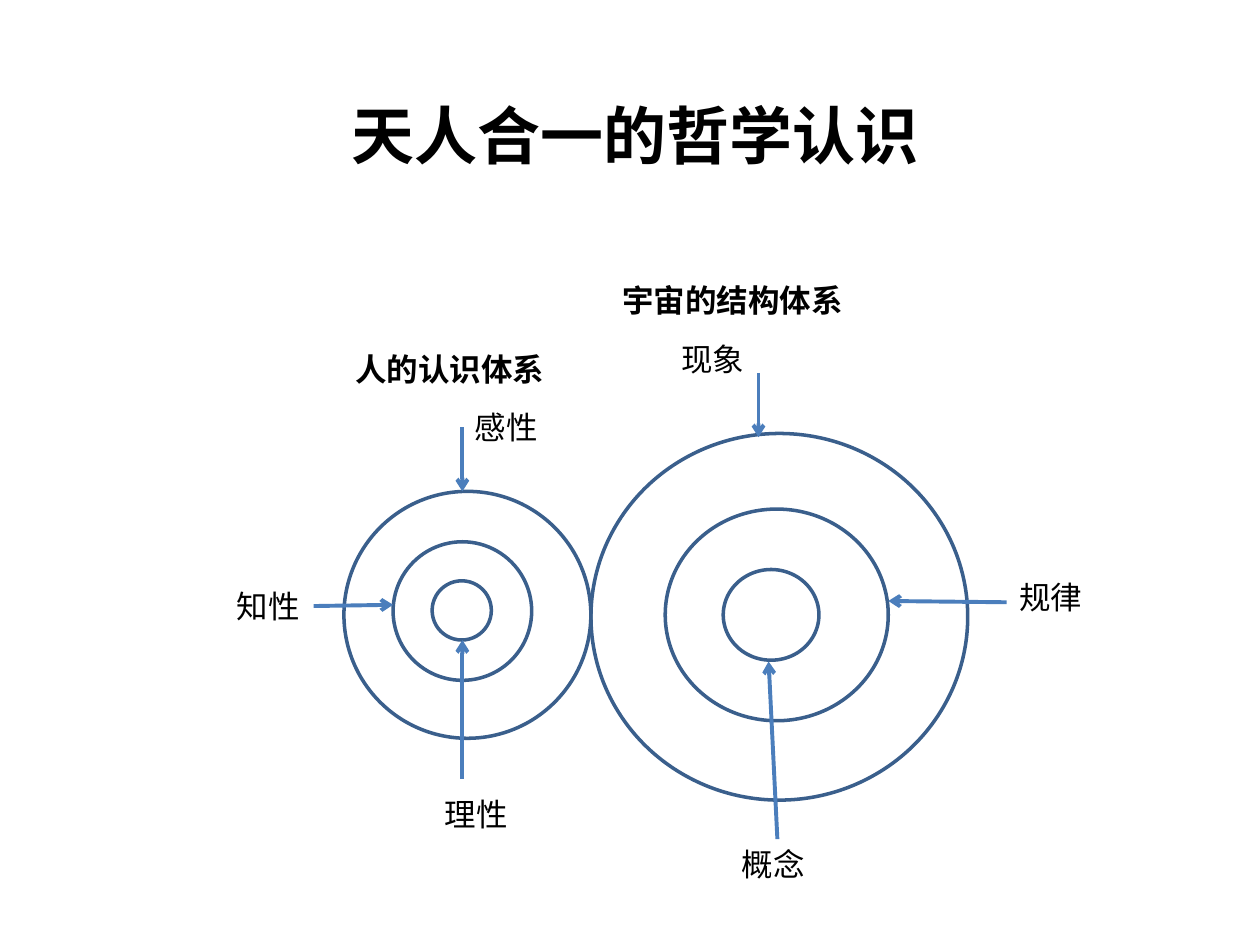
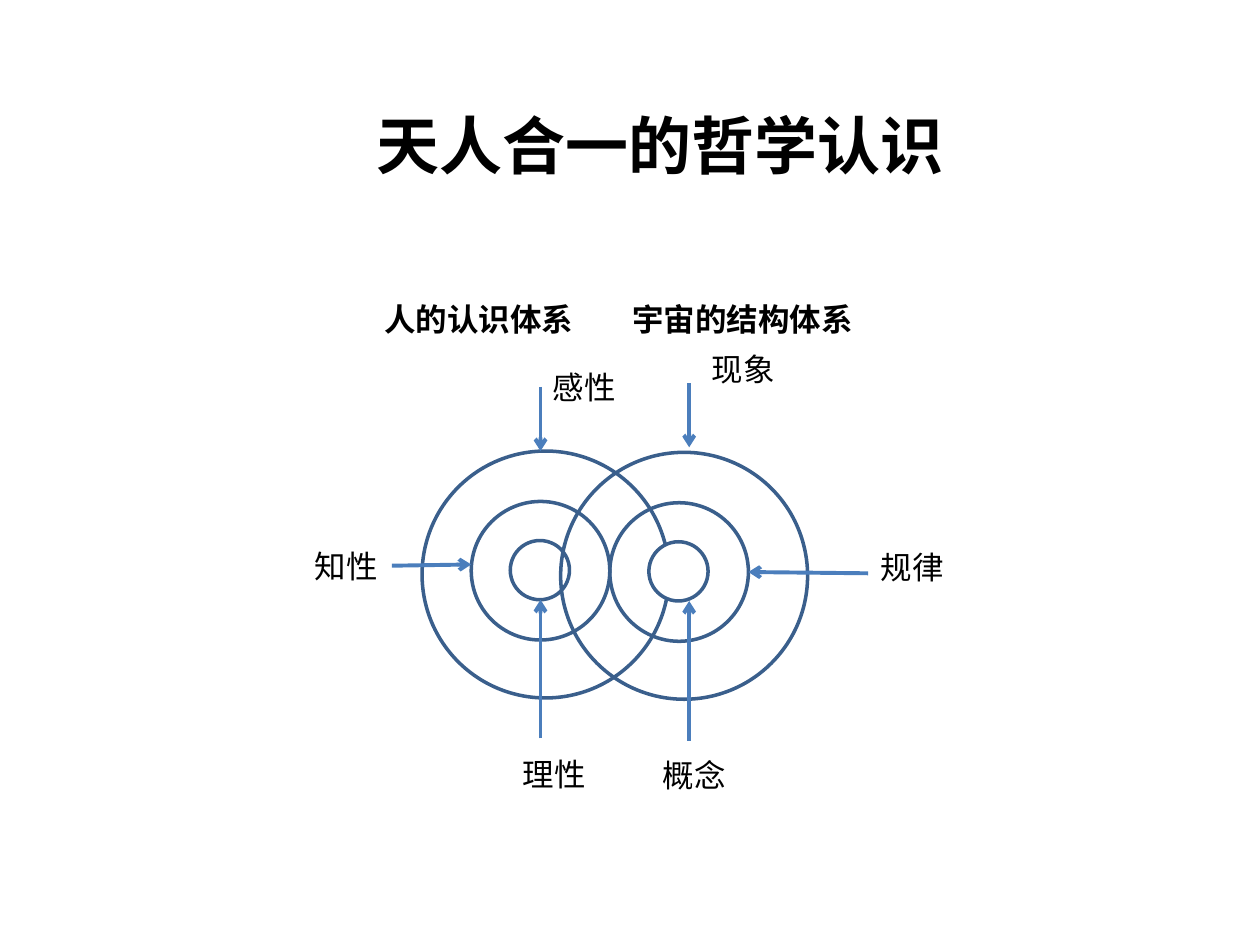
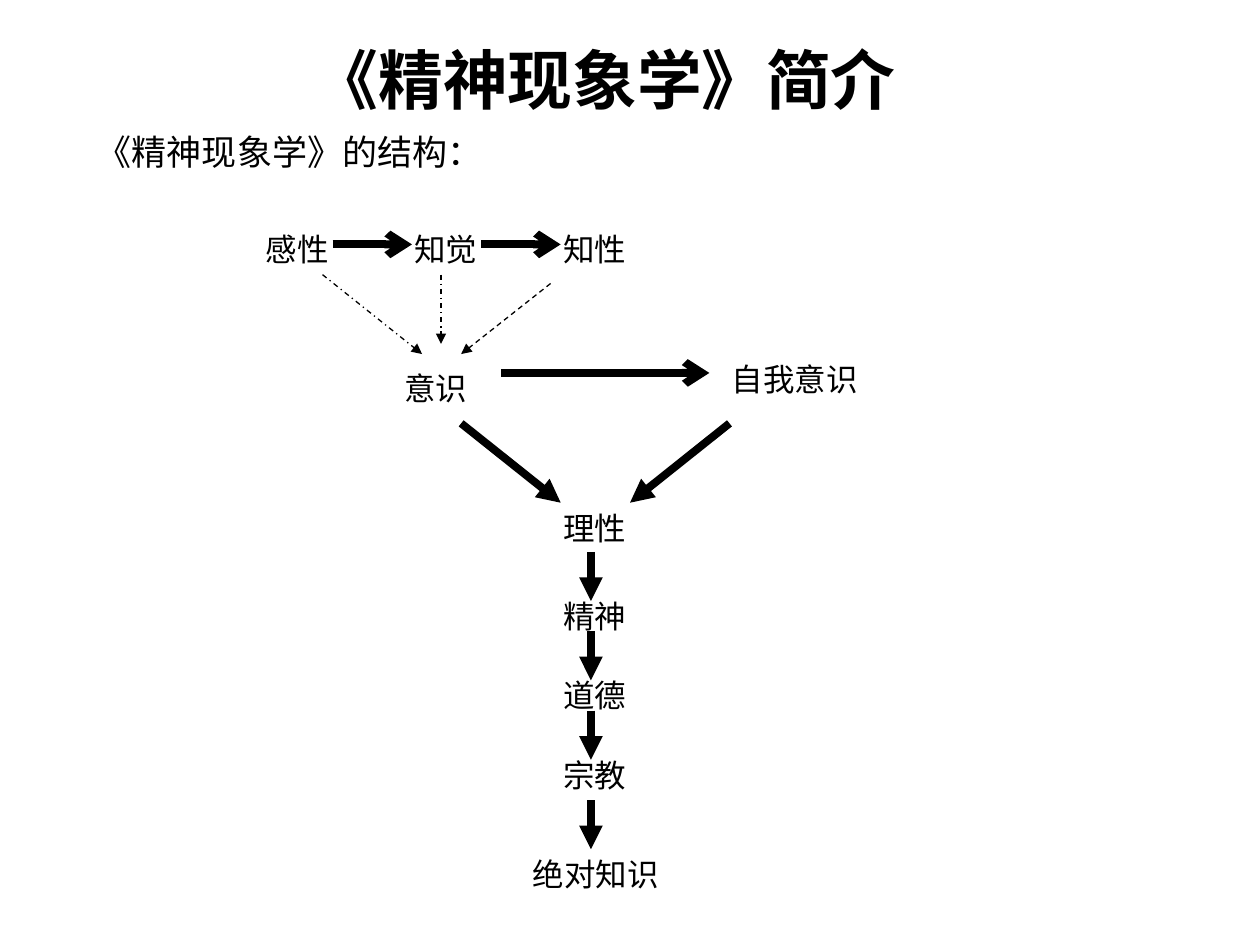
from lxml.etree import SubElement
from pptx import Presentation
from pptx.dml.color import RGBColor
from pptx.enum.dml import MSO_LINE as DASH
from pptx.enum.shapes import MSO_CONNECTOR as CONNECTOR, MSO_SHAPE as SHAPE
from pptx.enum.text import MSO_ANCHOR as ANCHOR, MSO_AUTO_SIZE as AUTO_SIZE, PP_ALIGN as ALIGN
from pptx.oxml.ns import qn
from pptx.util import Inches, Pt

COLORS = {"text": "000000", "ring": "3A5F8C", "pointer": "4B7EBC", "core": "FFFFFF"}
LABEL_HEIGHT = 0.4
LABEL_WIDTH = 0.71

# Rings as left, top, width, height from the corner of the outer ring, core first
EVEN_RINGS = [(0.7, 0.71, 0.47, 0.47), (0.39, 0.4, 1.1, 1.1), (0, 0, 1.96, 1.96)]
WIDE_RINGS = [(1.05, 1.08, 0.76, 0.72), (0.59, 0.6, 1.77, 1.68), (0, 0, 2.99, 2.91)]

# Callouts as term, label position, arrow start, arrow end, from the same corner
HUMAN_CALLOUTS = [
    ("感性", (0.94, -0.71), (0.94, -0.51), (0.94, 0)),
    ("知性", (-0.95, 0.71), (-0.24, 0.91), (0.39, 0.9)),
    ("理性", (0.7, 2.36), (0.94, 2.28), (0.94, 1.18)),
]
WIDE_UNIVERSE_CALLOUTS = [
    ("现象", (0.62, -0.79), (1.33, -0.48), (1.33, 0.03)),
    ("规律", (3.3, 1.1), (3.3, 1.34), (2.36, 1.33)),
    ("概念", (1.1, 3.22), (1.48, 3.22), (1.41, 1.81)),
]
EVEN_UNIVERSE_CALLOUTS = [
    ("现象", (1.1, -0.86), (1.02, -0.55), (1.02, -0.04)),
    ("规律", (2.44, 0.71), (2.44, 0.96), (1.49, 0.95)),
    ("概念", (0.71, 2.36), (1.02, 2.29), (1.02, 1.18)),
]
HUMAN_HEADING = ("人的认识体系", 1.72)
UNIVERSE_HEADING = ("宇宙的结构体系", 1.98)


def rgb(name):
    return RGBColor.from_string(COLORS[name])


def add_text(slide, words, left, top, width, height=LABEL_HEIGHT, size=18,
             bold=False, font="Calibri", wrap=False):
    box = slide.shapes.add_textbox(*map(Inches, (left, top, width, height)))
    frame = box.text_frame
    frame.word_wrap = wrap
    frame.auto_size = AUTO_SIZE.SHAPE_TO_FIT_TEXT
    line = frame.paragraphs[0]
    line.text = words
    line.font.name = font
    line.font.size = Pt(size)
    line.font.bold = bold
    line.font.color.rgb = rgb("text")
    return frame


def add_title(slide, words, left, top, width, height=0.83, size=36):
    frame = add_text(slide, words, left, top, width, height, size, bold=True, wrap=True)
    frame.paragraphs[0].alignment = ALIGN.CENTER
    frame.paragraphs[0].line_spacing = 1.2
    return frame


def add_arrow(slide, start, end, color="text", weight=4.5, head="triangle", dash=None):
    arrow = slide.shapes.add_connector(CONNECTOR.STRAIGHT, *map(Inches, (*start, *end)))
    arrow.line.color.rgb = rgb(color)
    arrow.line.width = Pt(weight)
    if dash:
        arrow.line.dash_style = dash
    SubElement(arrow.line._get_or_add_ln(), qn("a:tailEnd"), type=head)
    SubElement(arrow._element.spPr, qn("a:effectLst"))


def add_ring_system(slide, left, top, rings, callouts, heading, heading_offset):
    """Concentric rings with pointers; left and top are the outer ring's corner."""
    def place(offset):
        return left + offset[0], top + offset[1]

    # Rings: only the core is filled
    for level, (x, y, width, height) in enumerate(rings):
        ring = slide.shapes.add_shape(
            SHAPE.OVAL, *map(Inches, (*place((x, y)), width, height)))
        ring.shadow.inherit = False
        ring.line.color.rgb = rgb("ring")
        ring.line.width = Pt(2)
        if level == 0:
            ring.fill.solid()
            ring.fill.fore_color.rgb = rgb("core")
        else:
            ring.fill.background()

    # Terms and their pointers
    for term, label, start, end in callouts:
        add_arrow(slide, place(start), place(end), "pointer", 2.25, "arrow")
        add_text(slide, term, *place(label), LABEL_WIDTH)

    words, width = heading
    add_text(slide, words, *place(heading_offset), width, bold=True)


def add_consciousness_stages(slide, left, top):
    """Sense, perception and understanding lead down to consciousness."""
    step = 1.18
    for index, stage in enumerate(["感性", "知觉", "知性"]):
        x = left + index * step
        add_text(slide, stage, x, top, LABEL_WIDTH)
        if index < 2:
            add_arrow(slide, (x + 0.63, top + 0.16), (x + 1.26, top + 0.16), head="arrow")

    # Thin dashed arrows towards consciousness
    for start, end, dash in [
        ((0.55, 0.4), (1.34, 1.03), DASH.DASH_DOT),
        ((1.49, 0.4), (1.49, 0.95), DASH.DASH_DOT),
        ((2.36, 0.47), (1.65, 1.03), DASH.DASH),
    ]:
        add_arrow(slide, (left + start[0], top + start[1]),
                  (left + end[0], top + end[1]), weight=0.75, dash=dash)


def add_self_consciousness(slide, left, top):
    """Consciousness and self-consciousness meet in reason."""
    add_text(slide, "意识", left, top, 0.72)
    add_text(slide, "自我意识", left + 2.6, top - 0.07, 1.23)
    add_arrow(slide, (left + 0.87, top + 0.08), (left + 2.52, top + 0.08), head="arrow")
    for start, end in [(0.55, 1.34), (2.68, 1.89)]:
        add_arrow(slide, (left + start, top + 0.48), (left + end, top + 1.11))


def add_spirit_column(slide, left, top):
    """Reason rises through spirit to absolute knowledge."""
    for stage, y in [("理性", 0), ("精神", 0.7), ("道德", 1.33), ("宗教", 1.96)]:
        add_text(slide, stage, left, top + y, LABEL_WIDTH)
    add_text(slide, "绝对知识", left - 0.24, top + 2.75, 1.21)
    for y in (0.39, 1.02, 1.65, 2.36):
        add_arrow(slide, (left + 0.32, top + y), (left + 0.32, top + y + 0.39))


def build_touching_systems(slide):
    add_ring_system(slide, 2.73, 3.9, EVEN_RINGS, HUMAN_CALLOUTS,
                    HUMAN_HEADING, (-0.01, -1.17))
    add_ring_system(slide, 4.69, 3.44, WIDE_RINGS, WIDE_UNIVERSE_CALLOUTS,
                    UNIVERSE_HEADING, (0.15, -1.26))
    add_title(slide, "天人合一的哲学认识", 1.93, 0.6, 6.22)


def build_overlapping_systems(slide):
    add_ring_system(slide, 3.35, 3.58, EVEN_RINGS, HUMAN_CALLOUTS,
                    HUMAN_HEADING, (-0.4, -1.25))
    add_ring_system(slide, 4.45, 3.59, EVEN_RINGS, EVEN_UNIVERSE_CALLOUTS,
                    UNIVERSE_HEADING, (0.47, -1.26))
    add_title(slide, "天人合一的哲学认识", 2.09, 0.68, 6.3)


def build_phenomenology(slide):
    add_text(slide, "《精神现象学》的结构：", 0.67, 0.99, 3.29, 0.44, 20, font="Arial")
    title = add_title(slide, "《精神现象学》简介", 1.69, 0.05, 6.22, 1.02, 37)
    title.auto_size = AUTO_SIZE.NONE
    title.vertical_anchor = ANCHOR.MIDDLE
    add_consciousness_stages(slide, 2.01, 1.78)
    add_self_consciousness(slide, 3.11, 2.88)
    add_spirit_column(slide, 4.37, 3.99)


def main():
    deck = Presentation()
    deck.slide_width, deck.slide_height = Inches(10), Inches(7.5)
    blank = deck.slide_layouts[6]
    for build in (build_touching_systems, build_overlapping_systems, build_phenomenology):
        build(deck.slides.add_slide(blank))
    deck.save("out.pptx")


if __name__ == "__main__":
    main()
